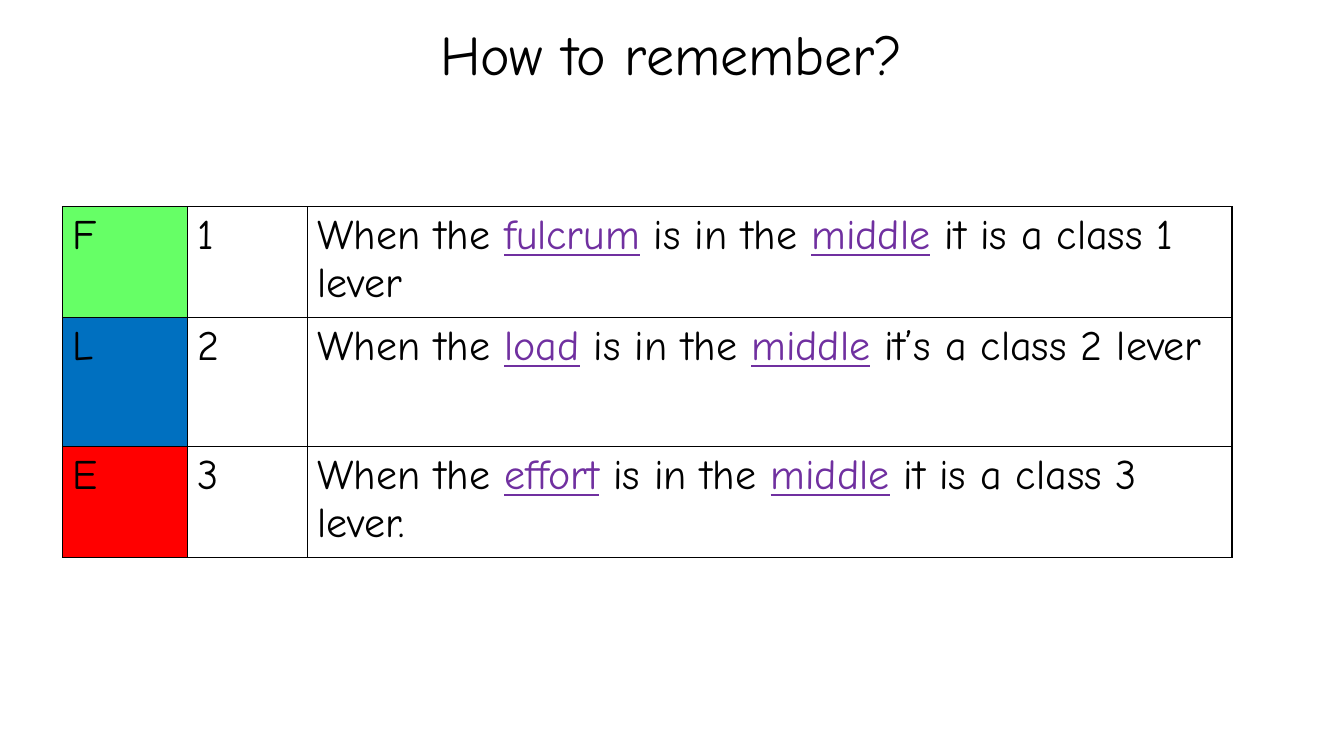
from dataclasses import dataclass

from lxml.etree import SubElement
from pptx import Presentation
from pptx.dml.color import RGBColor as RGB
from pptx.enum.text import MSO_AUTO_SIZE as AutoSize
from pptx.oxml.ns import qn
from pptx.util import Inches, Pt


@dataclass(frozen=True)
class Theme:
    font: str = "Comic Neue"
    title_size: int = 40
    body_size: int = 30
    ink: str = "000000"
    keyword: str = "7030A0"
    paper: str = "FFFFFF"
    fulcrum: str = "66FF66"
    load: str = "0070C0"
    effort: str = "FF0000"
    border_width: int = 1


THEME = Theme()

LEVERS = [
    ("F", "fulcrum", THEME.fulcrum, " it is a class 1 lever"),
    ("L", "load", THEME.load, " it’s a class 2 lever"),
    ("E", "effort", THEME.effort, " it is a class 3 lever."),
]


def add_text(paragraph, text, size=THEME.body_size, color=THEME.ink, underline=None):
    run = paragraph.add_run()
    run.text = text
    run.font.name = THEME.font
    run.font.size = Pt(size)
    run.font.color.rgb = RGB.from_string(color)
    run.font.underline = underline


def add_title(slide, left, top, width, height):
    title = slide.shapes.add_textbox(
        Inches(left), Inches(top), Inches(width), Inches(height)
    )
    title.text_frame.word_wrap = False
    title.text_frame.auto_size = AutoSize.SHAPE_TO_FIT_TEXT
    add_text(title.text_frame.paragraphs[0], "How to remember?", size=THEME.title_size)


def style_cell(cell, fill):
    properties = cell._tc.get_or_add_tcPr()
    for side in ("a:lnL", "a:lnR", "a:lnT", "a:lnB"):
        border = SubElement(properties, qn(side), w=str(Pt(THEME.border_width)))
        solid = SubElement(border, qn("a:solidFill"))
        SubElement(solid, qn("a:srgbClr"), val=THEME.ink)
    cell.fill.solid()
    cell.fill.fore_color.rgb = RGB.from_string(fill)


def add_sentence(paragraph, part, ending):
    emphasis = {"color": THEME.keyword, "underline": True}
    add_text(paragraph, "When the ")
    add_text(paragraph, part, **emphasis)
    add_text(paragraph, " is in the ")
    add_text(paragraph, "middle", **emphasis)
    add_text(paragraph, ending)


def add_lever_table(slide, left, top, column_widths, row_heights):
    levers = slide.shapes.add_table(
        len(row_heights),
        len(column_widths),
        Inches(left),
        Inches(top),
        Inches(sum(column_widths)),
        Inches(sum(row_heights)),
    ).table
    levers.first_row = False
    levers.horz_banding = False
    for column, width in zip(levers.columns, column_widths):
        column.width = Inches(width)
    for row, height in zip(levers.rows, row_heights):
        row.height = Inches(height)

    for number, (row, lever) in enumerate(zip(levers.rows, LEVERS), start=1):
        letter, part, color, ending = lever
        for cell, fill in zip(row.cells, (color, THEME.paper, THEME.paper)):
            style_cell(cell, fill)
        initial, lever_class, rule = (
            cell.text_frame.paragraphs[0] for cell in row.cells
        )
        add_text(initial, letter)
        add_text(lever_class, str(number))
        add_sentence(rule, part, ending)


def main():
    deck = Presentation()
    deck.slide_width = Inches(13.33)
    deck.slide_height = Inches(7.5)
    slide = deck.slides.add_slide(deck.slide_layouts[6])
    add_title(slide, 4.27, 0.14, 5.34, 0.77)
    add_lever_table(slide, 0.62, 2.05, (1.24, 1.19, 9.17), (1.1, 1.28, 1.1))
    deck.save("out.pptx")


if __name__ == "__main__":
    main()
